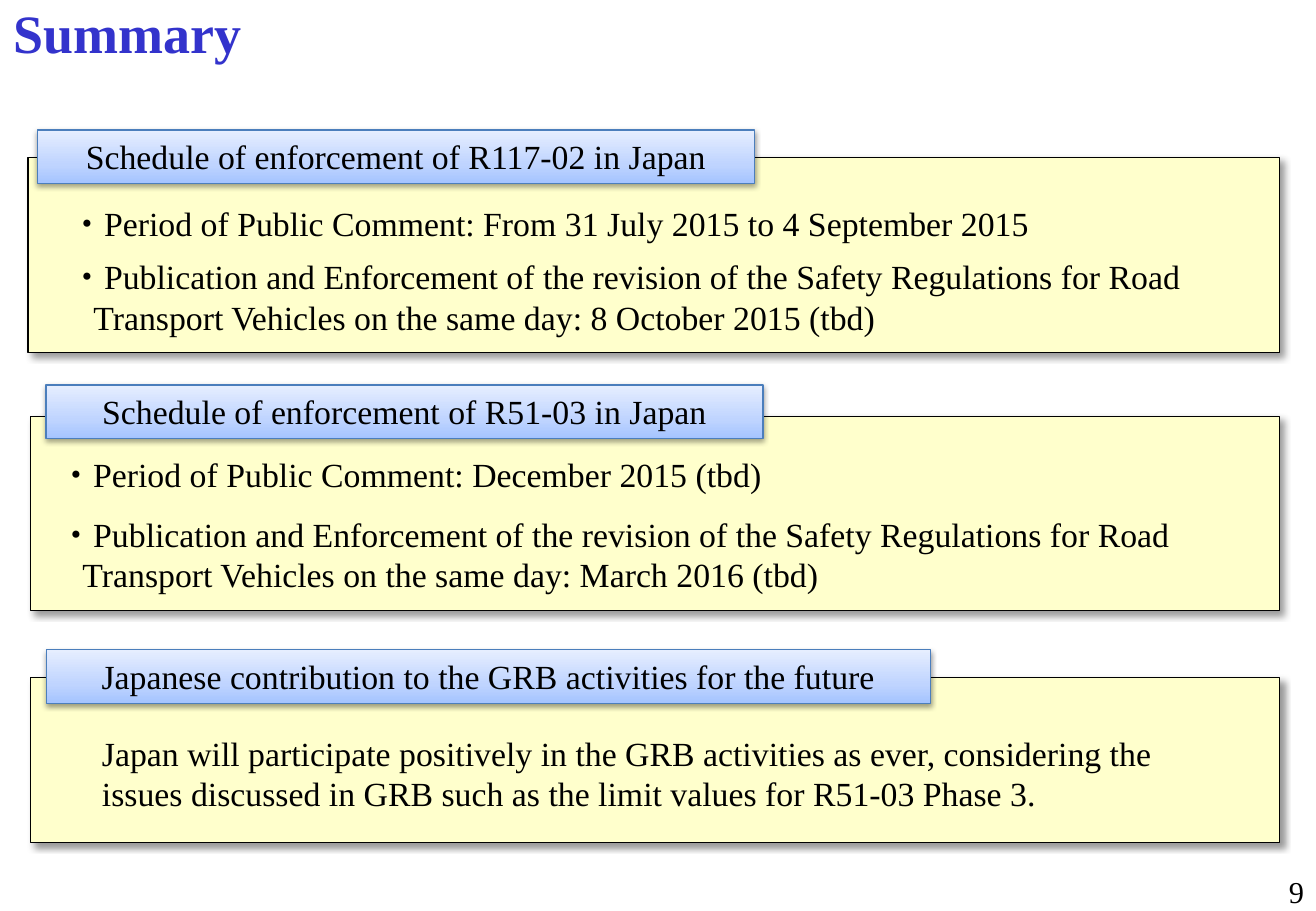
from dataclasses import dataclass

from pptx import Presentation
from pptx.dml.color import RGBColor
from pptx.enum.shapes import MSO_SHAPE
from pptx.enum.text import MSO_ANCHOR, PP_ALIGN
from pptx.oxml import parse_xml
from pptx.oxml.ns import nsdecls, qn
from pptx.util import Inches, Pt

RECT = MSO_SHAPE.RECTANGLE
LEFT, CENTER, RIGHT = PP_ALIGN.LEFT, PP_ALIGN.CENTER, PP_ALIGN.RIGHT
TOP, MIDDLE = MSO_ANCHOR.TOP, MSO_ANCHOR.MIDDLE

BLACK = RGBColor(0x00, 0x00, 0x00)
TITLE_BLUE = RGBColor(0x33, 0x33, 0xCC)
CREAM = RGBColor(0xFF, 0xFF, 0xCC)
LABEL_EDGE = RGBColor(0x4B, 0x7E, 0xBC)
LABEL_STOPS = (
    (0, RGBColor(0xA4, 0xC4, 0xFF)),
    (35, RGBColor(0xBF, 0xD4, 0xFF)),
    (100, RGBColor(0xE6, 0xEE, 0xFF)),
)

FONT = "Times New Roman"
BODY_FORMAT = {"name": FONT, "size": Pt(20), "bold": False}
TITLE_FORMAT = {"name": FONT, "size": Pt(32), "bold": True}
NUMBER_FORMAT = {"name": FONT, "size": Pt(18), "bold": False}


@dataclass(frozen=True)
class Box:
    left: float
    top: float
    width: float
    height: float

    def emu(self) -> list[int]:
        return [Inches(v) for v in (self.left, self.top, self.width, self.height)]


@dataclass(frozen=True)
class Shadow:
    alpha: int
    blur: float
    distance: float
    angle: int


@dataclass(frozen=True)
class Note:
    box: Box
    text: str
    hanging: float = 0


@dataclass(frozen=True)
class Section:
    panel: Box
    label: Box
    heading: str
    notes: tuple[Note, ...]


PANEL_SHADOW = Shadow(40, 4, 3, 45)
LABEL_SHADOW = Shadow(38, 3.1, 1.6, 90)
REVISION = (
    "・Publication and Enforcement of the revision of the Safety Regulations "
    "for Road Transport Vehicles on the same day: "
)

SECTIONS = (
    Section(
        Box(0.23, 1.3, 10.3, 1.6),
        Box(0.31, 1.07, 5.9, 0.44),
        "Schedule of enforcement of R117-02 in Japan",
        (
            Note(Box(0.48, 1.62, 9.59, 0.44),
                 "・Period of Public Comment: From 31 July 2015 to 4 September 2015"),
            Note(Box(0.48, 2.06, 9.66, 0.77), REVISION + "8 October 2015 (tbd)", 0.19),
        ),
    ),
    Section(
        Box(0.25, 3.43, 10.28, 1.6),
        Box(0.38, 3.17, 5.9, 0.44),
        "Schedule of enforcement of R51-03 in Japan",
        (
            Note(Box(0.39, 3.69, 6.76, 0.44),
                 "・Period of Public Comment: December 2015 (tbd)"),
            Note(Box(0.39, 4.18, 9.75, 0.77), REVISION + "March 2016 (tbd)", 0.19),
        ),
    ),
    Section(
        Box(0.25, 5.58, 10.28, 1.36),
        Box(0.38, 5.35, 7.28, 0.44),
        "Japanese contribution to the GRB activities for the future",
        (
            Note(Box(0.74, 5.98, 9.08, 0.77),
                 "Japan will participate positively in the GRB activities as ever, "
                 "considering the issues discussed in GRB such as the limit values "
                 "for R51-03 Phase 3."),
        ),
    ),
)


def write(sp, text: str, fmt: dict, color: RGBColor = BLACK,
          align: PP_ALIGN = LEFT, anchor: MSO_ANCHOR = TOP, hanging: float = 0) -> None:
    tf = sp.text_frame
    tf.word_wrap = True
    tf.vertical_anchor = anchor
    p = tf.paragraphs[0]
    p.alignment = align
    if hanging:
        pPr = p._p.get_or_add_pPr()
        pPr.set("marL", str(Inches(hanging)))
        pPr.set("indent", str(-Inches(hanging)))
    r = p.add_run()
    r.text = text
    for name, value in fmt.items():
        setattr(r.font, name, value)
    r.font.color.rgb = color


def add_text(slide, box: Box, text: str, fmt: dict, **options) -> None:
    write(slide.shapes.add_textbox(*box.emu()), text, fmt, **options)


def add_rect(slide, box: Box, edge: RGBColor, shadow: Shadow):
    sp = slide.shapes.add_shape(RECT, *box.emu())
    sp.line.color.rgb = edge
    sp.line.width = Pt(0.75)
    sp.shadow.inherit = False
    sp._element.spPr.find(qn("a:effectLst")).append(parse_xml(
        f'<a:outerShdw {nsdecls("a")} blurRad="{Pt(shadow.blur)}" '
        f'dist="{Pt(shadow.distance)}" dir="{shadow.angle * 60000}" rotWithShape="0">'
        f'<a:srgbClr val="{BLACK}"><a:alpha val="{shadow.alpha * 1000}"/></a:srgbClr>'
        '</a:outerShdw>'))
    return sp


def fill_gradient(sp, stops: tuple[tuple[int, RGBColor], ...]) -> None:
    sp.fill.gradient()
    sp.fill.gradient_angle = 90
    gs_list = sp._element.spPr.find(qn("a:gradFill")).find(qn("a:gsLst"))
    for gs in list(gs_list):
        gs_list.remove(gs)
    for position, color in stops:
        gs_list.append(parse_xml(
            f'<a:gs {nsdecls("a")} pos="{position * 1000}">'
            f'<a:srgbClr val="{color}"/></a:gs>'))


def add_section(slide, section: Section) -> None:
    panel = add_rect(slide, section.panel, BLACK, PANEL_SHADOW)
    panel.fill.solid()
    panel.fill.fore_color.rgb = CREAM
    label = add_rect(slide, section.label, LABEL_EDGE, LABEL_SHADOW)
    fill_gradient(label, LABEL_STOPS)
    write(label, section.heading, BODY_FORMAT, align=CENTER)
    for note in section.notes:
        add_text(slide, note.box, note.text, BODY_FORMAT, hanging=note.hanging)


def main() -> None:
    prs = Presentation()
    prs.slide_width, prs.slide_height = Inches(10.83), Inches(7.5)
    slide = prs.slides.add_slide(prs.slide_layouts[6])
    add_text(slide, Box(0.01, 0, 8.32, 0.52), "Summary", TITLE_FORMAT,
             color=TITLE_BLUE, anchor=MIDDLE)
    add_text(slide, Box(10.34, 7.14, 0.49, 0.33), "9", NUMBER_FORMAT, align=RIGHT)
    for section in SECTIONS:
        add_section(slide, section)
    prs.save("out.pptx")


if __name__ == "__main__":
    main()
